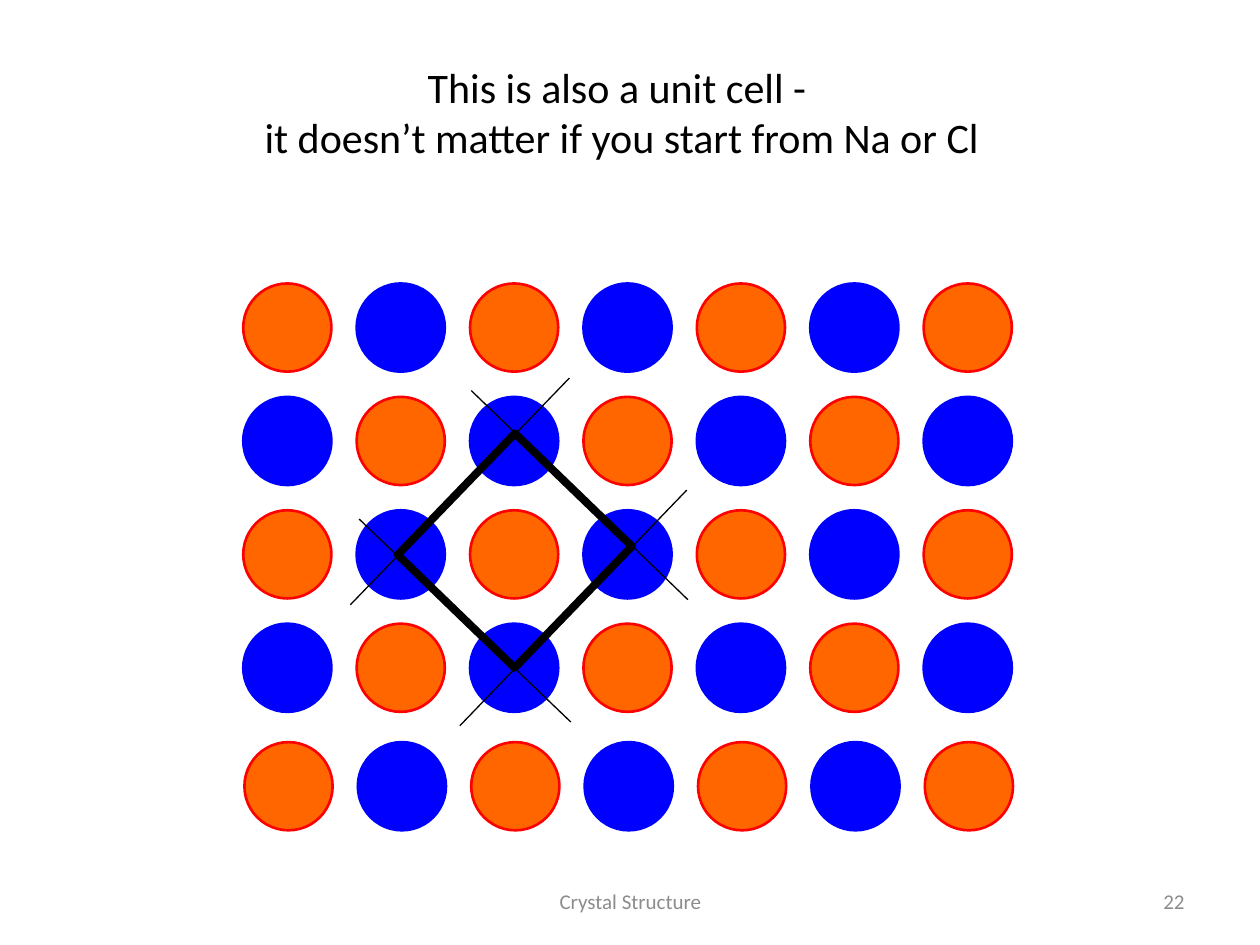
from dataclasses import dataclass

from lxml.etree import SubElement
from pptx import Presentation
from pptx.dml.color import RGBColor
from pptx.enum.shapes import MSO_CONNECTOR, MSO_SHAPE
from pptx.enum.text import MSO_ANCHOR, PP_ALIGN
from pptx.oxml.ns import qn
from pptx.util import Pt


@dataclass(frozen=True)
class Theme:
    font: str = "Calibri"
    title_size: float = 24
    footer_size: float = 12
    black: str = "000000"
    grey: str = "8C8C8C"
    # Fill and outline of the two kinds of ion
    orange_ion: tuple = ("FF6600", "FF0000")
    blue_ion: tuple = ("0000FF", "0000FF")


THEME = Theme()

# Lattice geometry, in points
COLUMNS, PITCH, DIAMETER = 7, 64.8, 50.4
ROW_STARTS = [(139, 162 + row * PITCH) for row in range(4)] + [(139.7, 424.1)]

# Cell edges run on past the corners: x1, y1, x2, y2
EDGE_LINES = [
    (325.4, 216, 200.2, 345.6),
    (392.4, 280.1, 262.8, 414.7),
    (269.3, 223.2, 393.1, 342.7),
    (205.2, 296.6, 326.2, 412.6),
]


def rgb(value):
    return RGBColor.from_string(value)


def place(sp, left, top, width, height):
    sp.left, sp.top, sp.width, sp.height = Pt(left), Pt(top), Pt(width), Pt(height)


def set_text(sp, text, *, size, color, align):
    tf = sp.text_frame
    tf.word_wrap = True
    tf.vertical_anchor = MSO_ANCHOR.MIDDLE
    p = tf.paragraphs[0]
    p.text = text
    p.alignment = align
    for r in p.runs:
        r.font.name = THEME.font
        r.font.size = Pt(size)
        r.font.color.rgb = rgb(color)


def set_line(sp, color, width):
    sp.line.color.rgb = rgb(color)
    sp.line.width = Pt(width)


def add_footer(s, text, box, align):
    sp = s.shapes.add_textbox(*map(Pt, box))
    set_text(sp, text, size=THEME.footer_size, color=THEME.grey, align=align)


def add_ion(s, left, top, colors):
    fill, outline = colors
    sp = s.shapes.add_shape(
        MSO_SHAPE.OVAL, Pt(left), Pt(top), Pt(DIAMETER), Pt(DIAMETER))
    sp.shadow.inherit = False
    sp.fill.solid()
    sp.fill.fore_color.rgb = rgb(fill)
    set_line(sp, outline, 1.5)


def add_lattice(s):
    for row, (left, top) in enumerate(ROW_STARTS):
        for col in range(COLUMNS):
            colors = THEME.blue_ion if (row + col) % 2 else THEME.orange_ion
            add_ion(s, left + col * PITCH, top, colors)


def add_edge_line(shapes, ends):
    line = shapes.add_connector(MSO_CONNECTOR.STRAIGHT, *map(Pt, ends))
    set_line(line, THEME.black, 0.75)
    SubElement(line._element.spPr, qn("a:effectLst"))


def add_unit_cell(s):
    group = s.shapes.add_group_shape()
    for ends in EDGE_LINES:
        add_edge_line(group.shapes, ends)
    cell = group.shapes.add_shape(
        MSO_SHAPE.RECTANGLE, Pt(247.7), Pt(266.4), Pt(92.9), Pt(96.5))
    cell.rotation = 44
    cell.shadow.inherit = False
    cell.fill.background()
    set_line(cell, THEME.black, 4.5)


def main():
    prs = Presentation()
    prs.slide_width, prs.slide_height = Pt(720), Pt(540)
    s = prs.slides.add_slide(prs.slide_layouts[5])

    # Footer
    add_footer(s, "Crystal Structure", (246.2, 500.4, 228.2, 28.8), PP_ALIGN.CENTER)
    add_footer(s, "22", (516.2, 500.4, 167.8, 28.8), PP_ALIGN.RIGHT)

    # Title
    title = s.shapes.title
    place(title, 73.4, 7.9, 563.8, 111.6)
    set_text(title,
             "This is also a unit cell - \vit doesn’t matter if you start from Na or Cl",
             size=THEME.title_size, color=THEME.black, align=PP_ALIGN.CENTER)

    # Crystal with its unit cell
    add_lattice(s)
    add_unit_cell(s)

    prs.save("out.pptx")


if __name__ == "__main__":
    main()
